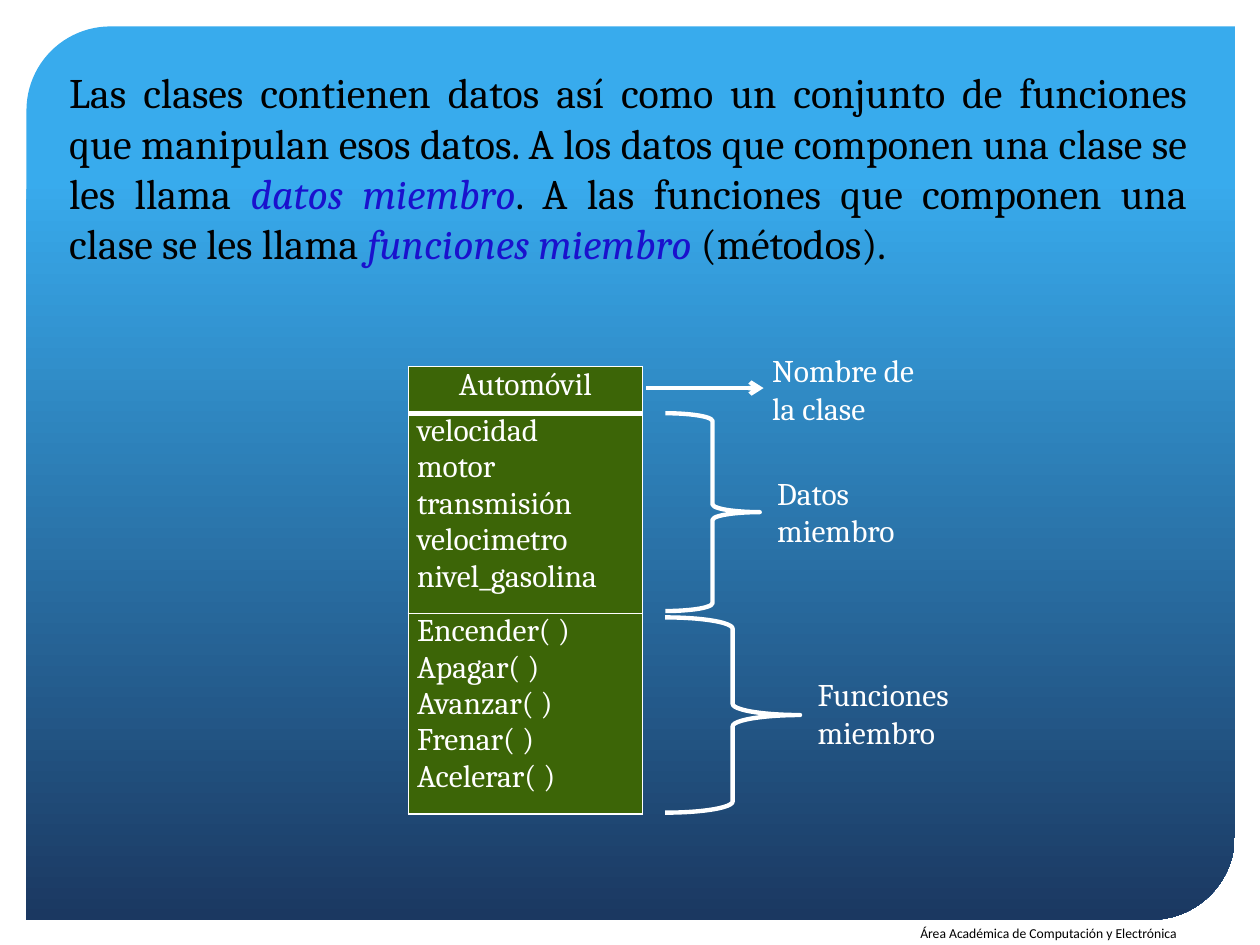
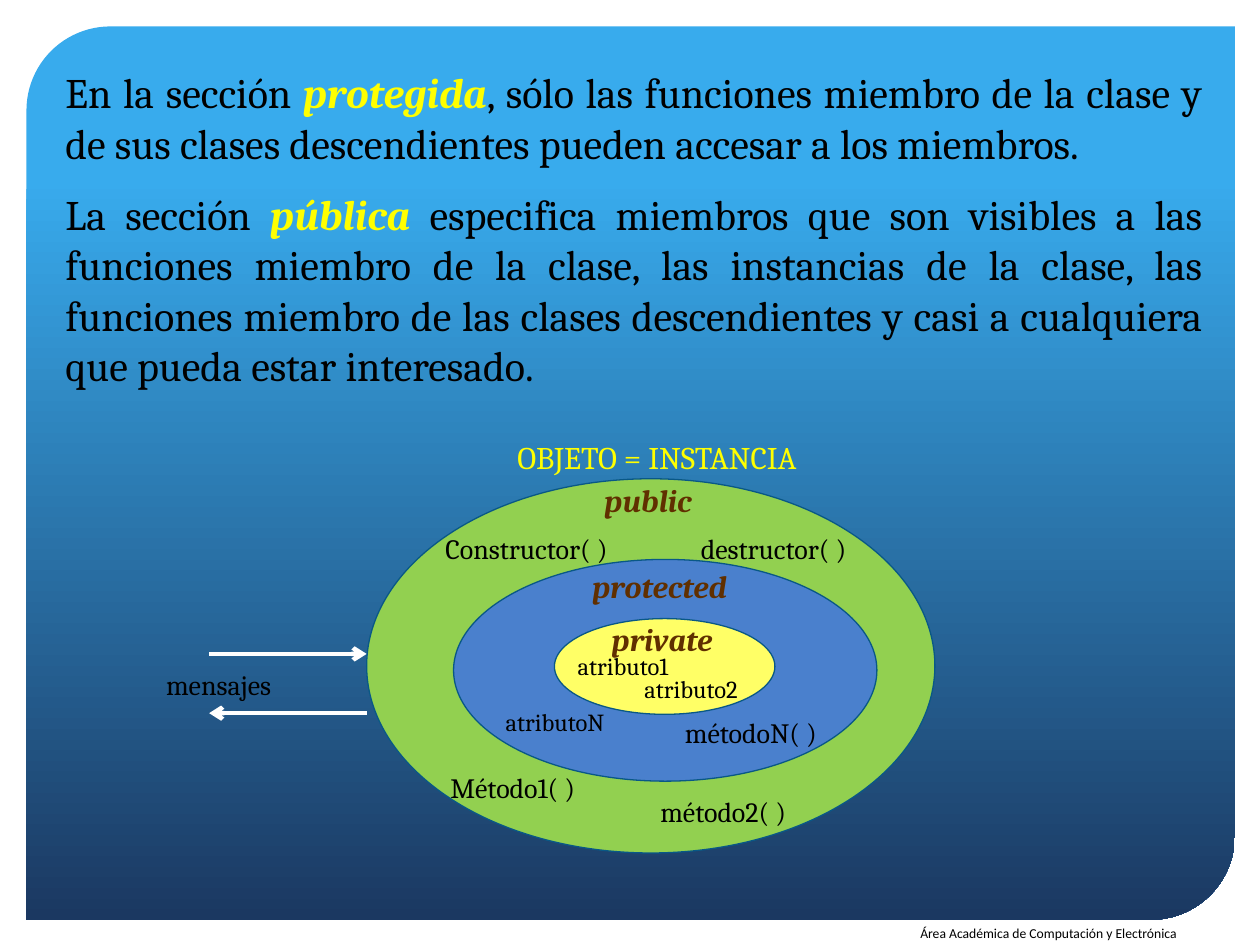
import dataclasses
import typing

import lxml.etree
import pptx
import pptx.dml.color
import pptx.enum.shapes
import pptx.enum.text
import pptx.oxml.ns
import pptx.presentation
import pptx.slide
import pptx.table
import pptx.util

SHAPES = pptx.enum.shapes.MSO_SHAPE
ALIGN = pptx.enum.text.PP_ALIGN
LEFT, CENTER, RIGHT, JUSTIFY = ALIGN.LEFT, ALIGN.CENTER, ALIGN.RIGHT, ALIGN.JUSTIFY

WIDTH, HEIGHT = pptx.util.Inches(10), pptx.util.Inches(7.5)
COLUMNS, ROWS = 100, 75

BLACK, WHITE, YELLOW = "000000", "FFFFFF", "FFFF00"
SKY, NAVY, INDIGO = "38ABED", "1B3861", "1A11CD"
CLASS_GREEN, BROWN, RING_EDGE = "3C6507", "602F00", "095886"
STROKE = 2.5


class Area(typing.NamedTuple):
    column: float
    row: float
    columns: float
    rows: float


@dataclasses.dataclass(frozen=True)
class Span:
    text: str
    color: str = BLACK
    bold: bool = False
    italic: bool = False


@dataclasses.dataclass(frozen=True)
class Label:
    area: Area
    paras: list[list[Span]]
    size: float
    align: ALIGN = LEFT
    font: str = "Cambria"
    gap: float = 0


@dataclasses.dataclass(frozen=True)
class Ring:
    area: Area
    color: str


@dataclasses.dataclass(frozen=True)
class Arrow:
    start: float
    end: float
    row: float


PANEL = Area(2.1, 2.1, 95.9, 70.9)
FOOTER = Label(Area(51.3, 72.9, 43.1, 2.1),
               [[Span("Área Académica de Computación y Electrónica")]],
               7.8, RIGHT, "Calibri")

CLASS_TEXT = Label(Area(4.5, 4.8, 90.7, 21.2), [[
    Span("Las clases contienen datos así como un conjunto de funciones que manipulan "
         "esos datos. A los datos que componen una clase se les llama "),
    Span("datos miembro", INDIGO, italic=True),
    Span(". A las funciones que componen una clase se les llama "),
    Span("funciones miembro", INDIGO, italic=True),
    Span(" (métodos)."),
]], 24, JUSTIFY)

CLASS_AREA = Area(32.4, 29.1, 18.6, 35.5)
CLASS_ROWS = [3.7, 15.9, 15.9]
CLASS_CELLS = [
    ["Automóvil"],
    ["velocidad", "motor", "transmisión", "velocimetro", "nivel_gasolina"],
    ["Encender( )", "Apagar( )", "Avanzar( )", "Frenar( )", "Acelerar( )"],
]
CLASS_LABELS = [
    Label(Area(60.3, 27.4, 14.3, 7.1), [[Span("Nombre de la clase", WHITE)]], 18),
    Label(Area(60.7, 37.1, 12.3, 7.1), [[Span("Datos miembro", WHITE)]], 18),
    Label(Area(63.9, 53.1, 13.9, 7.1),
          [[Span("Funciones", WHITE)], [Span("miembro", WHITE)]], 18),
]
CLASS_ARROW = Arrow(51.3, 60.6, 30.8)
BRACES = [Area(52.8, 32.8, 7.5, 15.7), Area(52.8, 49, 10.7, 15.5)]

ACCESS_TEXT = Label(Area(4.2, 4.8, 92.2, 26.9), [
    [Span("En la sección"),
     Span(" protegida", YELLOW, True, True),
     Span(", sólo las funciones miembro de la clase y de sus clases descendientes "
          "pueden accesar a los miembros.")],
    [Span("La sección "),
     Span("pública ", YELLOW, True, True),
     Span("especifica miembros que son visibles a las funciones miembro de la clase, "
          "las instancias de la clase, las funciones miembro de las clases "
          "descendientes y casi a cualquiera que pueda estar interesado.")],
], 24, JUSTIFY, gap=12)

RINGS = [
    Ring(Area(29.1, 38, 45.1, 29.7), "92D050"),
    Ring(Area(36, 44.4, 33.6, 17.6), "4A80CD"),
    Ring(Area(44, 49.1, 17.5, 7.6), "FFFF66"),
]
MESSAGE_ARROWS = [Arrow(16.6, 29.1, 51.9), Arrow(29.1, 16.6, 56.6)]


def ring_title(text: str, column: float, row: float) -> Label:
    return Label(Area(column, row, 13.7, 4), [[Span(text, BROWN, True, True)]], 18, CENTER)


def method(text: str, column: float, row: float) -> Label:
    return Label(Area(column, row, 17.4, 3.7), [[Span(text)]], 16, CENTER)


def attribute(text: str, column: float, row: float) -> Label:
    return Label(Area(column, row, 13.5, 3.4), [[Span(text)]], 14, CENTER)


ACCESS_LABELS = [
    Label(Area(38.8, 34.3, 26.7, 4), [[Span("OBJETO = INSTANCIA", YELLOW)]], 18, CENTER),
    Label(Area(12.2, 52.5, 13.6, 3.7), [[Span("mensajes")]], 16),
    ring_title("public", 44.6, 37.7),
    ring_title("protected", 45.5, 44.5),
    ring_title("private", 45.7, 48.7),
    method("Constructor( )", 33.1, 41.7),
    method("destructor( )", 52.7, 41.7),
    method("Método1( )", 32, 60.7),
    method("método2( )", 48.7, 62.6),
    method("métodoN( )", 50.9, 56.3),
    attribute("atributo1", 42.7, 51.2),
    attribute("atributo2", 48.1, 53),
    attribute("atributoN", 37.3, 55.6),
]


def rgb(color: str) -> pptx.dml.color.RGBColor:
    return pptx.dml.color.RGBColor.from_string(color)


def across(columns: float) -> int:
    return round(WIDTH * columns / COLUMNS)


def down(rows: float) -> int:
    return round(HEIGHT * rows / ROWS)


def place(area: Area) -> tuple[int, int, int, int]:
    return across(area.column), down(area.row), across(area.columns), down(area.rows)


def write(frame, paras: list[list[Span]], size: float, align: ALIGN,
          font: str = "Cambria", gap: float = 0) -> None:
    for index, spans in enumerate(paras):
        para = frame.add_paragraph() if index else frame.paragraphs[0]
        para.alignment = align
        para.space_before = pptx.util.Pt(gap if index else 0)
        for span in spans:
            run = para.add_run()
            run.text = span.text
            run.font.name = font
            run.font.size = pptx.util.Pt(size)
            run.font.bold = span.bold
            run.font.italic = span.italic
            run.font.color.rgb = rgb(span.color)


def add_label(page: pptx.slide.Slide, label: Label) -> None:
    frame = page.shapes.add_textbox(*place(label.area)).text_frame
    frame.word_wrap = True
    write(frame, label.paras, label.size, label.align, label.font, label.gap)


def add_figure(page: pptx.slide.Slide, kind: SHAPES, area: Area):
    figure = page.shapes.add_shape(kind, *place(area))
    figure.shadow.inherit = False
    return figure


def set_line(line, color: str, width: float) -> None:
    line.color.rgb = rgb(color)
    line.width = pptx.util.Pt(width)


def add_ring(page: pptx.slide.Slide, ring: Ring) -> None:
    oval = add_figure(page, SHAPES.OVAL, ring.area)
    oval.fill.solid()
    oval.fill.fore_color.rgb = rgb(ring.color)
    set_line(oval.line, RING_EDGE, 0.75)


def add_brace(page: pptx.slide.Slide, area: Area) -> None:
    brace = add_figure(page, SHAPES.RIGHT_BRACE, area)
    brace.fill.background()
    set_line(brace.line, WHITE, STROKE)


def add_arrow(page: pptx.slide.Slide, arrow: Arrow) -> None:
    height = down(arrow.row)
    connector = page.shapes.add_connector(
        pptx.enum.shapes.MSO_CONNECTOR.STRAIGHT,
        across(arrow.start), height, across(arrow.end), height)
    set_line(connector.line, WHITE, STROKE)
    properties = connector._element.spPr
    outline = properties.find(pptx.oxml.ns.qn("a:ln"))
    lxml.etree.SubElement(outline, pptx.oxml.ns.qn("a:tailEnd"), type="arrow")
    lxml.etree.SubElement(properties, pptx.oxml.ns.qn("a:effectLst"))


def style_cell(cell: pptx.table._Cell, top: float, bottom: float) -> None:
    properties = cell._tc.get_or_add_tcPr()
    for side, width in {"L": 1, "R": 1, "T": top, "B": bottom}.items():
        edge = lxml.etree.SubElement(properties, pptx.oxml.ns.qn(f"a:ln{side}"),
                                     w=str(pptx.util.Pt(width)))
        paint = lxml.etree.SubElement(edge, pptx.oxml.ns.qn("a:solidFill"))
        lxml.etree.SubElement(paint, pptx.oxml.ns.qn("a:srgbClr"), val=WHITE)
    cell.fill.solid()
    cell.fill.fore_color.rgb = rgb(CLASS_GREEN)
    cell.margin_left = cell.margin_right = pptx.util.Inches(0.07)
    cell.margin_top = cell.margin_bottom = 0


def add_class_table(page: pptx.slide.Slide) -> None:
    table = page.shapes.add_table(len(CLASS_CELLS), 1, *place(CLASS_AREA)).table
    table.first_row = table.horz_banding = False
    for index, lines in enumerate(CLASS_CELLS):
        table.rows[index].height = down(CLASS_ROWS[index])
        cell = table.cell(index, 0)
        style_cell(cell, 3 if index == 1 else 1, 3 if index == 0 else 1)
        write(cell.text_frame, [[Span(line, WHITE)] for line in lines], 18,
              LEFT if index else CENTER)


def add_page(deck: pptx.presentation.Presentation) -> pptx.slide.Slide:
    page = deck.slides.add_slide(deck.slide_layouts[6])
    panel = add_figure(page, SHAPES.ROUND_2_DIAG_RECTANGLE, PANEL)
    panel.adjustments[0], panel.adjustments[1] = 0.094, 0
    panel.line.fill.background()
    panel.fill.gradient()
    panel.fill.gradient_angle = 270
    for stop, color, position in zip(panel.fill.gradient_stops, (SKY, NAVY), (0.17, 1)):
        stop.color.rgb = rgb(color)
        stop.position = position
    add_label(page, FOOTER)
    return page


def build_class_page(deck: pptx.presentation.Presentation) -> None:
    page = add_page(deck)
    add_label(page, CLASS_TEXT)
    add_class_table(page)
    for label in CLASS_LABELS:
        add_label(page, label)
    add_arrow(page, CLASS_ARROW)
    for area in BRACES:
        add_brace(page, area)


def build_access_page(deck: pptx.presentation.Presentation) -> None:
    page = add_page(deck)
    add_label(page, ACCESS_TEXT)
    for ring in RINGS:
        add_ring(page, ring)
    for arrow in MESSAGE_ARROWS:
        add_arrow(page, arrow)
    for label in ACCESS_LABELS:
        add_label(page, label)


def main() -> None:
    deck = pptx.Presentation()
    deck.slide_width, deck.slide_height = WIDTH, HEIGHT
    build_class_page(deck)
    build_access_page(deck)
    deck.save("out.pptx")


if __name__ == "__main__":
    main()
